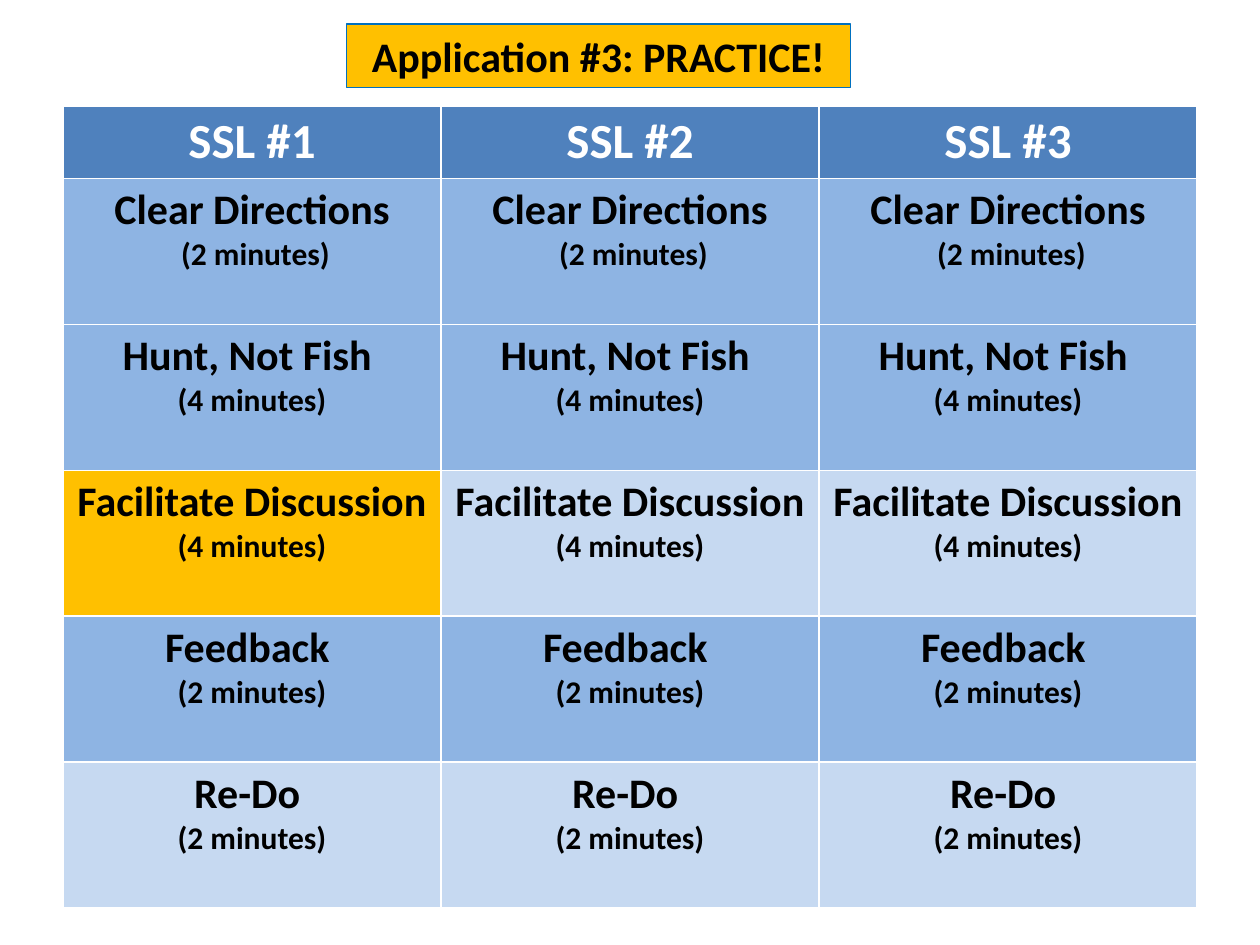
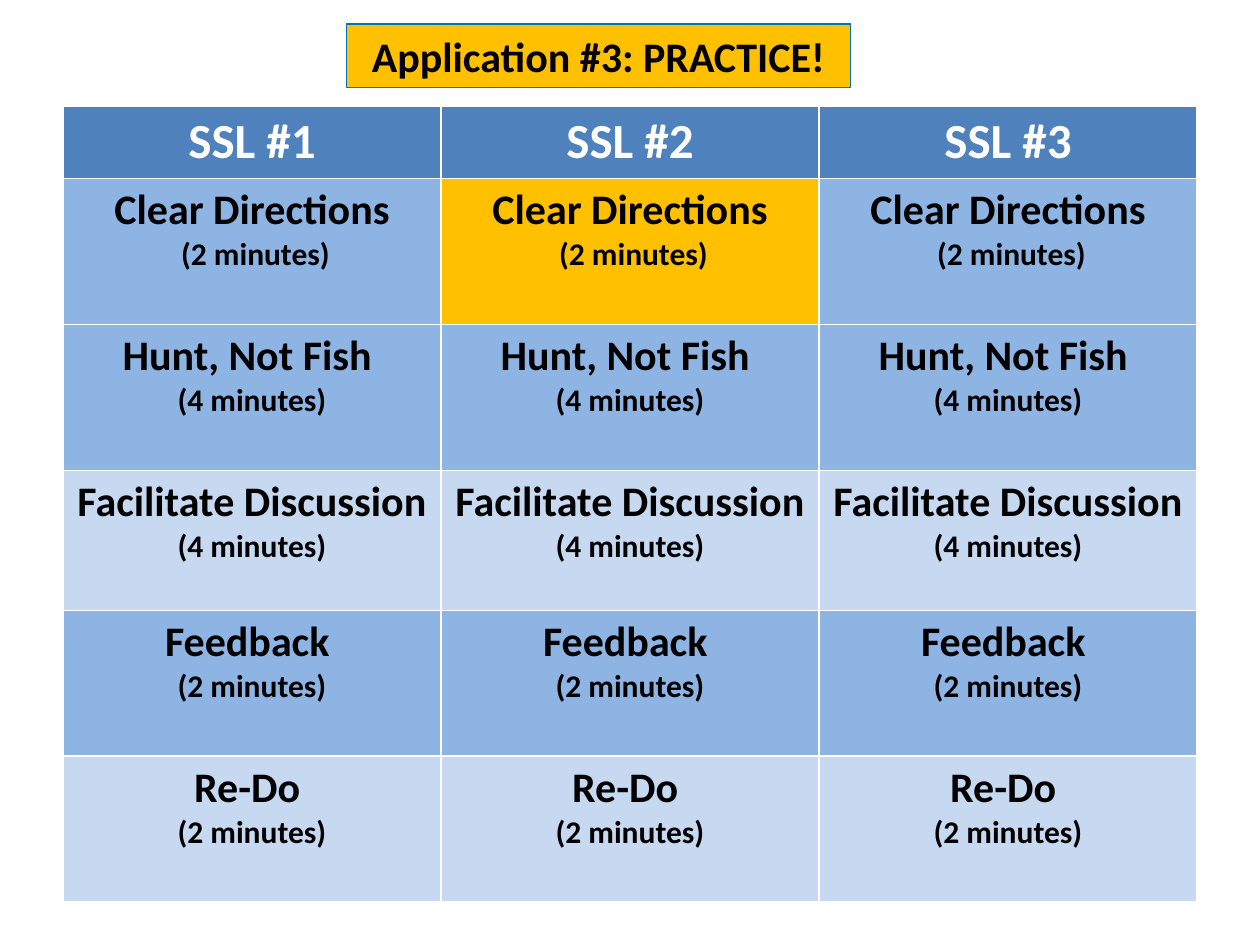
from pptx import Presentation
from pptx.dml.color import RGBColor
from pptx.enum.text import MSO_ANCHOR as Anchor, MSO_AUTO_SIZE as AutoSize, PP_ALIGN as Align
from pptx.util import Pt

TITLE = "Application #3: PRACTICE!"
SESSIONS = ["SSL #1", "SSL #2", "SSL #3"]

GOLD, OUTLINE, HEADER = "FFC000", "0070C0", "4F81BD"
MID, PALE, BLACK, WHITE = "8EB4E3", "C6D9F1", "000000", "FFFFFF"

STEPS = [
    ("Clear Directions", " (2 minutes)", MID),
    ("Hunt, Not Fish ", "(4 minutes)", MID),
    ("Facilitate Discussion ", "(4 minutes)", PALE),
    ("Feedback ", "(2 minutes)", MID),
    ("Re-Do ", "(2 minutes)", PALE),
]

HEADER_HEIGHT, STEP_HEIGHT = 40.6, 83.4
SLIDES = [
    {"current": (3, 0), "heights": {}},
    {"current": (1, 1), "heights": {3: 80}},
]


def paint(fill, color):
    fill.solid()
    fill.fore_color.rgb = RGBColor.from_string(color)


def style(paragraph, size, color):
    paragraph.alignment = Align.CENTER
    font = paragraph.font
    font.name, font.size, font.bold = "Calibri", Pt(size), True
    font.color.rgb = RGBColor.from_string(color)


def write(frame, lines, color):
    frame.text = "\n".join(text for text, size in lines)
    for paragraph, (text, size) in zip(frame.paragraphs, lines):
        style(paragraph, size, color)


def add_title(slide):
    title = slide.shapes.title
    title.left, title.top, title.width, title.height = Pt(198), Pt(13.75), Pt(288), Pt(36.35)
    paint(title.fill, GOLD)
    title.line.color.rgb = RGBColor.from_string(OUTLINE)
    title.line.width = Pt(0.75)
    frame = title.text_frame
    frame.auto_size = AutoSize.NONE
    frame.vertical_anchor = Anchor.TOP
    write(frame, [(TITLE, 24)], BLACK)


def add_schedule(slide, current, heights):
    row_heights = [HEADER_HEIGHT] + [
        heights.get(row, STEP_HEIGHT) for row in range(1, len(STEPS) + 1)
    ]
    schedule = slide.shapes.add_table(
        len(row_heights), len(SESSIONS), Pt(36), Pt(60.5), Pt(648), Pt(sum(row_heights))
    ).table
    for row, height in zip(schedule.rows, row_heights):
        row.height = Pt(height)
    for column, session in enumerate(SESSIONS):
        heading = schedule.cell(0, column)
        paint(heading.fill, HEADER)
        write(heading.text_frame, [(session, 28)], WHITE)
        for row, (step, duration, color) in enumerate(STEPS, 1):
            cell = schedule.cell(row, column)
            paint(cell.fill, GOLD if (row, column) == current else color)
            write(cell.text_frame, [(step, 24), (duration, 18)], BLACK)


def main():
    deck = Presentation()
    deck.slide_width, deck.slide_height = Pt(720), Pt(540)
    for plan in SLIDES:
        slide = deck.slides.add_slide(deck.slide_layouts[5])
        add_title(slide)
        add_schedule(slide, **plan)
    deck.save("out.pptx")


if __name__ == "__main__":
    main()
